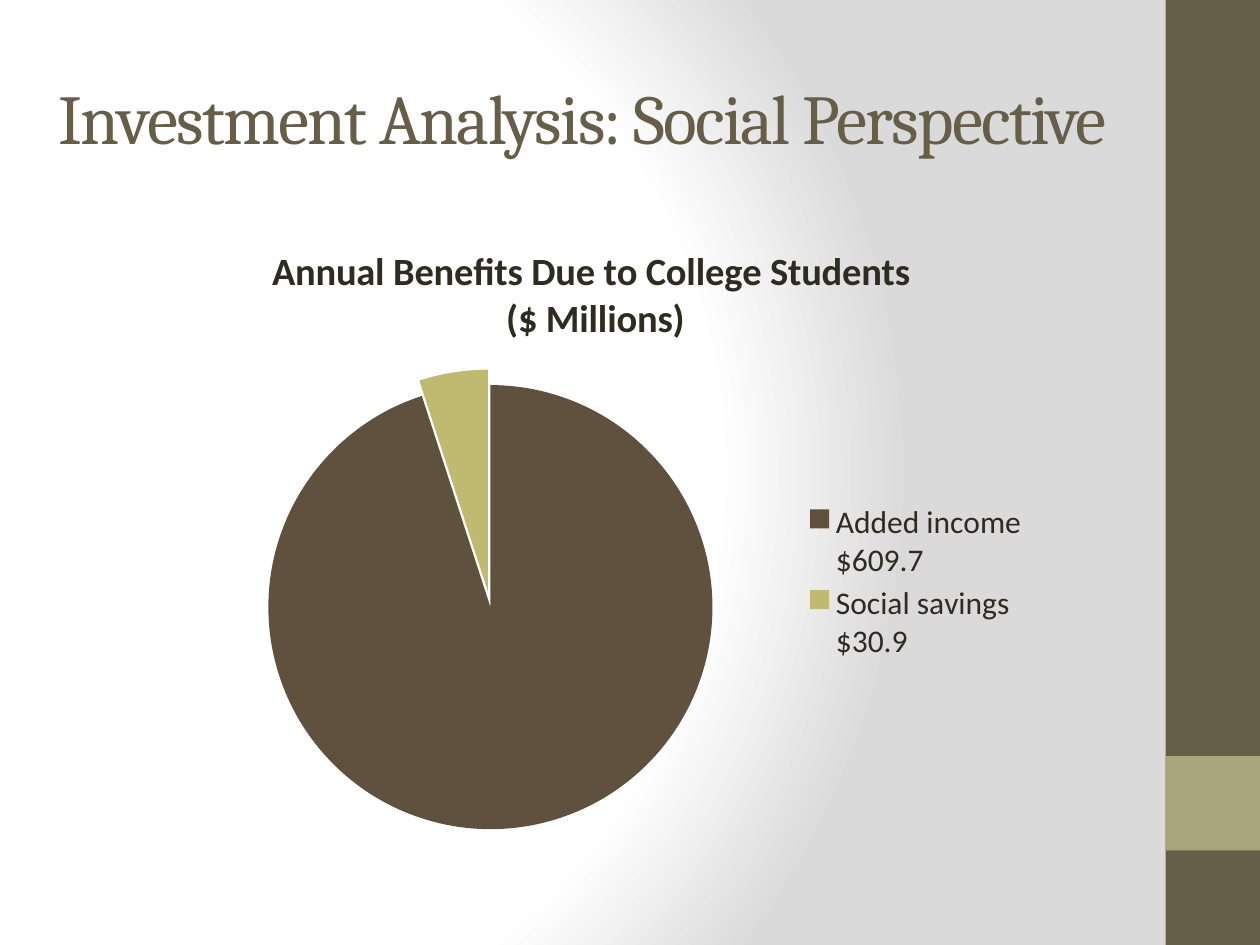
from typing import NamedTuple

from lxml.etree import SubElement
from pptx import Presentation
from pptx.chart.chart import Chart
from pptx.chart.data import CategoryChartData
from pptx.dml.color import RGBColor
from pptx.enum.chart import XL_CHART_TYPE, XL_LEGEND_POSITION
from pptx.enum.shapes import MSO_SHAPE
from pptx.enum.text import MSO_ANCHOR, PP_ALIGN
from pptx.oxml import parse_xml
from pptx.oxml.ns import nsdecls, qn
from pptx.slide import Slide
from pptx.util import Inches, Pt

COLORS = {
    "olive": "675E47",
    "sage": "A9A57C",
    "ink": "2F2B20",
    "brown": "5F513E",
    "moss": "C0BA71",
    "white": "FFFFFF",
    "gray": "DADADA",
}
HEADING_FONT = "Cambria"
BODY_FONT = "Calibri"
BAR_LEFT = 9.25


class Bar(NamedTuple):
    top: float
    height: float
    color: str


class Slice(NamedTuple):
    label: str
    value: float
    color: str
    explosion: int


BARS = [Bar(0, 7.5, "olive"), Bar(6, 0.75, "sage")]
SLICES = [
    Slice("Added income $609.7", 95, "brown", 0),
    Slice("Social savings $30.9", 5, "moss", 7),
]
CHART_TITLE = ["Annual Benefits Due to College Students", " ($ Millions)"]


def rgb(name: str) -> RGBColor:
    return RGBColor.from_string(COLORS[name])


def paint_background(slide: Slide) -> None:
    """Fill the page with a white-to-gray radial gradient."""
    slide.background.fill.solid()
    properties = slide.element.find(".//" + qn("p:bgPr"))
    stops = "".join(
        f'<a:gs pos="{position * 1000}"><a:srgbClr val="{COLORS[name]}"/></a:gs>'
        for position, name in [(0, "white"), (75, "white"), (100, "gray")]
    )
    gradient = parse_xml(
        f'<a:gradFill {nsdecls("a")} rotWithShape="1"><a:gsLst>{stops}</a:gsLst>'
        '<a:path path="circle">'
        '<a:fillToRect l="20000" t="50000" r="100000" b="50000"/>'
        "</a:path></a:gradFill>"
    )
    properties.replace(properties[0], gradient)


def add_bar(slide: Slide, bar: Bar) -> None:
    shape = slide.shapes.add_shape(
        MSO_SHAPE.RECTANGLE,
        Inches(BAR_LEFT), Inches(bar.top), Inches(10 - BAR_LEFT), Inches(bar.height),
    )
    shape.shadow.inherit = False
    shape.fill.solid()
    shape.fill.fore_color.rgb = rgb(bar.color)
    shape.line.fill.background()


def write_title(slide: Slide, text: str) -> None:
    title = slide.shapes.title
    title.left, title.top = Inches(0), Inches(0.3)
    title.width, title.height = Inches(BAR_LEFT), Inches(1.25)
    title.text_frame.vertical_anchor = MSO_ANCHOR.MIDDLE
    para = title.text_frame.paragraphs[0]
    para.alignment = PP_ALIGN.CENTER
    span = para.add_run()
    span.text = text
    span.font.name = HEADING_FONT
    span.font.size = Pt(40)
    span.font.color.rgb = rgb("olive")
    span.font._element.set("spc", "-100")


def place(element, inner: bool = False, **position: float) -> None:
    """Give a chart part a manual layout in fractions of the chart."""
    layout = element.find(qn("c:layout"))
    if layout is None:
        layout = parse_xml(f'<c:layout {nsdecls("c")}/>')
        before = element.find(qn("c:tx"))
        if before is None:
            before = element.find(qn("c:legendPos"))
        if before is None:
            element.insert(0, layout)
        else:
            before.addnext(layout)
    manual = SubElement(layout, qn("c:manualLayout"))
    if inner:
        SubElement(manual, qn("c:layoutTarget")).set("val", "inner")
    for mode in ("xMode", "yMode"):
        SubElement(manual, qn(f"c:{mode}")).set("val", "edge")
    for key, value in position.items():
        SubElement(manual, qn(f"c:{key}")).set("val", str(value))


def write_chart_title(chart: Chart) -> None:
    chart.has_title = True
    frame = chart.chart_title.text_frame
    for index, text in enumerate(CHART_TITLE):
        para = frame.add_paragraph() if index else frame.paragraphs[0]
        para.alignment = PP_ALIGN.CENTER
        span = para.add_run()
        span.text = text
        span.font.name = BODY_FONT
        span.font.size = Pt(22)
        span.font.bold = True
        span.font.color.rgb = rgb("ink")
    place(chart.chart_title._element, x=0.14, y=0.05)


def add_benefits_pie(slide: Slide) -> None:
    data = CategoryChartData()
    data.categories = [part.label for part in SLICES]
    data.add_series("Series 1", [part.value for part in SLICES])
    chart = slide.shapes.add_chart(
        XL_CHART_TYPE.PIE,
        Inches(1.08), Inches(1.67), Inches(7.5), Inches(5.08), data,
    ).chart
    chart.font.name = BODY_FONT
    chart.font.size = Pt(18)
    chart.font.color.rgb = rgb("ink")
    write_chart_title(chart)

    chart.has_legend = True
    chart.legend.position = XL_LEGEND_POSITION.RIGHT
    chart.legend.include_in_layout = False
    place(chart.legend._element, x=0.7, y=0.45, w=0.25, h=0.26)

    plot = chart.plots[0]
    plot.vary_by_categories = True
    place(plot._element.getparent(), inner=True, x=0.14, y=0.27, w=0.47, h=0.7)
    for index, part in enumerate(SLICES):
        point = plot.series[0].points[index]
        point.format.fill.solid()
        point.format.fill.fore_color.rgb = rgb(part.color)
        point.format.line.fill.background()
        if part.explosion:
            properties = point.format.fill._xPr
            explosion = parse_xml(
                f'<c:explosion {nsdecls("c")} val="{part.explosion}"/>'
            )
            properties.addprevious(explosion)


def main() -> None:
    deck = Presentation()
    deck.slide_width, deck.slide_height = Inches(10), Inches(7.5)
    page = deck.slides.add_slide(deck.slide_layouts[5])
    paint_background(page)
    for bar in BARS:
        add_bar(page, bar)
    write_title(page, "Investment Analysis: Social Perspective")
    add_benefits_pie(page)
    deck.save("out.pptx")


if __name__ == "__main__":
    main()
